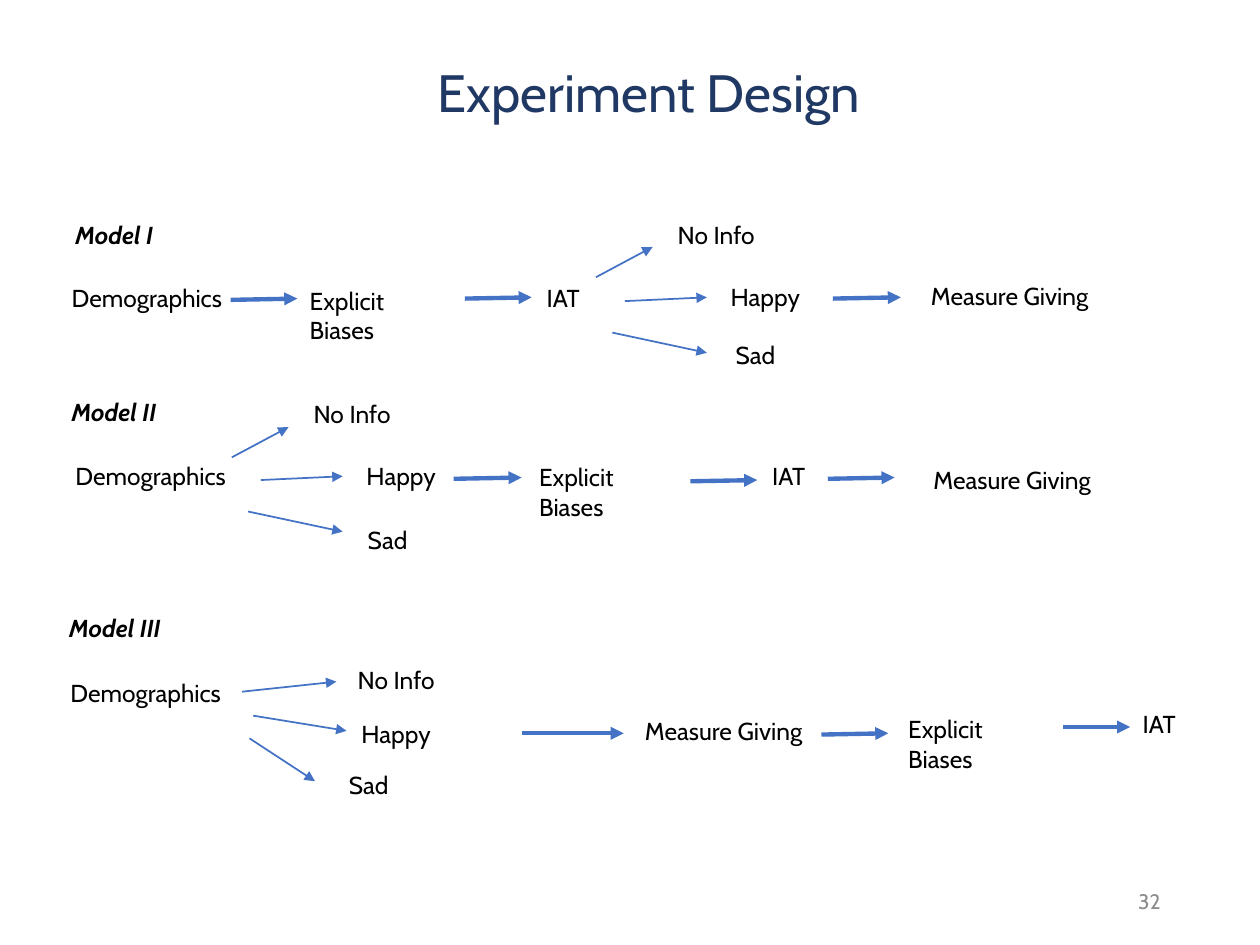
import pptx
import pptx.dml.color
import pptx.enum.shapes
import pptx.enum.text
import pptx.oxml
import pptx.oxml.ns
import pptx.util

Inches = pptx.util.Inches
ALIGN = pptx.enum.text.PP_ALIGN
ANCHOR = pptx.enum.text.MSO_ANCHOR

THEME = {
    "font": "Cabin",
    "title": (30, "203864"),
    "body": (14, "000000"),
    "number": (12, "8C8C8C"),
    "arrow": "4472C4",
    "flow": 2.5,
    "branch": 1,
}
LINE_HEIGHT = 0.34
TWO_LINES = 0.57

# Each model: heading, steps (text, left, top, width), and arrows
# (start x, start y, end x, end y): thick between steps, thin to conditions
MODELS = [
    {
        "heading": ("Model I", 0.5, 1.7, 0.87),
        "steps": [
            ("Demographics", 0.47, 2.2, 1.47),
            ("Explicit Biases", 2.36, 2.22, 1.32),
            ("IAT", 4.24, 2.2, 0.62),
            ("No Info", 5.28, 1.7, 0.85),
            ("Happy", 5.7, 2.19, 0.85),
            ("Sad", 5.74, 2.65, 0.85),
            ("Measure Giving", 7.29, 2.18, 1.58),
        ],
        "flow": [(1.83, 2.38, 2.36, 2.37), (3.69, 2.37, 4.22, 2.36),
                 (6.61, 2.37, 7.15, 2.36)],
        "branch": [(4.73, 2.2, 5.18, 1.96), (4.96, 2.39, 5.61, 2.36),
                   (4.86, 2.64, 5.61, 2.8)],
    },
    {
        "heading": ("Model II", 0.47, 3.1, 0.93),
        "steps": [
            ("Demographics", 0.5, 3.61, 1.48),
            ("No Info", 2.39, 3.12, 0.85),
            ("Happy", 2.81, 3.61, 0.85),
            ("Sad", 2.82, 4.12, 0.85),
            ("Explicit Biases", 4.18, 3.62, 1.28),
            ("IAT", 6.03, 3.61, 0.58),
            ("Measure Giving", 7.31, 3.64, 1.58),
        ],
        "flow": [(3.6, 3.8, 4.14, 3.79), (5.48, 3.82, 6.01, 3.81),
                 (6.57, 3.8, 7.1, 3.79)],
        "branch": [(1.84, 3.63, 2.29, 3.39), (2.07, 3.81, 2.72, 3.78),
                   (1.97, 4.06, 2.72, 4.22)],
    },
    {
        "heading": ("Model III", 0.45, 4.82, 0.99),
        "steps": [
            ("Demographics", 0.46, 5.33, 1.42),
            ("No Info", 2.74, 5.23, 0.85),
            ("Happy", 2.77, 5.66, 1.74),
            ("Sad", 2.67, 6.06, 1.58),
            ("Measure Giving", 5.02, 5.63, 1.58),
            ("Explicit Biases", 7.11, 5.62, 1.28),
            ("IAT", 8.97, 5.58, 0.59),
        ],
        "flow": [(4.14, 5.82, 4.95, 5.82), (6.52, 5.83, 7.05, 5.82),
                 (8.44, 5.77, 8.97, 5.77)],
        "branch": [(1.92, 5.49, 2.67, 5.41), (2.01, 5.68, 2.75, 5.8),
                   (1.98, 5.86, 2.5, 6.2)],
    },
]


def style_text(shape, text, role, align=ALIGN.LEFT, anchor=ANCHOR.TOP,
               heading=False):
    frame = shape.text_frame
    frame.word_wrap = not heading
    frame.vertical_anchor = anchor
    paragraph = frame.paragraphs[0]
    paragraph.alignment = align
    run = paragraph.add_run()
    run.text = text
    size, color = THEME[role]
    run.font.name = THEME["font"]
    run.font.size = pptx.util.Pt(size)
    run.font.color.rgb = pptx.dml.color.RGBColor.from_string(color)
    if heading:
        run.font.bold = run.font.italic = True
    return paragraph


def add_text(slide, text, left, top, width, height, role="body", **style):
    shape = slide.shapes.add_textbox(
        Inches(left), Inches(top), Inches(width), Inches(height))
    return style_text(shape, text, role, **style)


def add_arrow(slide, points, weight):
    connector = slide.shapes.add_connector(
        pptx.enum.shapes.MSO_CONNECTOR.STRAIGHT, *map(Inches, points))
    connector.line.color.rgb = pptx.dml.color.RGBColor.from_string(THEME["arrow"])
    connector.line.width = pptx.util.Pt(weight)
    # Arrowhead at the end, and no shadow
    line = connector.line._get_or_add_ln()
    head = pptx.oxml.parse_xml(
        f'<a:tailEnd {pptx.oxml.ns.nsdecls("a")} type="triangle"/>')
    line.append(head)
    line.addnext(pptx.oxml.parse_xml(
        f'<a:effectLst {pptx.oxml.ns.nsdecls("a")}/>'))


def main():
    presentation = pptx.Presentation()
    presentation.slide_width = Inches(10)
    presentation.slide_height = Inches(7.5)
    slide = presentation.slides.add_slide(presentation.slide_layouts[6])

    # Title and slide number
    title = add_text(slide, "Experiment Design", 0.84, 0.03, 8.62, 1.45, "title",
                     align=ALIGN.CENTER, anchor=ANCHOR.MIDDLE)
    title.line_spacing = 0.9
    add_text(slide, "32", 7.06, 6.95, 2.25, 0.4, "number",
             align=ALIGN.RIGHT, anchor=ANCHOR.MIDDLE)

    # Models
    for model in MODELS:
        add_text(slide, *model["heading"], LINE_HEIGHT, heading=True)
        for step in model["steps"]:
            height = TWO_LINES if step[0] == "Explicit Biases" else LINE_HEIGHT
            add_text(slide, *step, height)
        for kind in ("flow", "branch"):
            for points in model[kind]:
                add_arrow(slide, points, THEME[kind])

    presentation.save("out.pptx")


if __name__ == "__main__":
    main()
